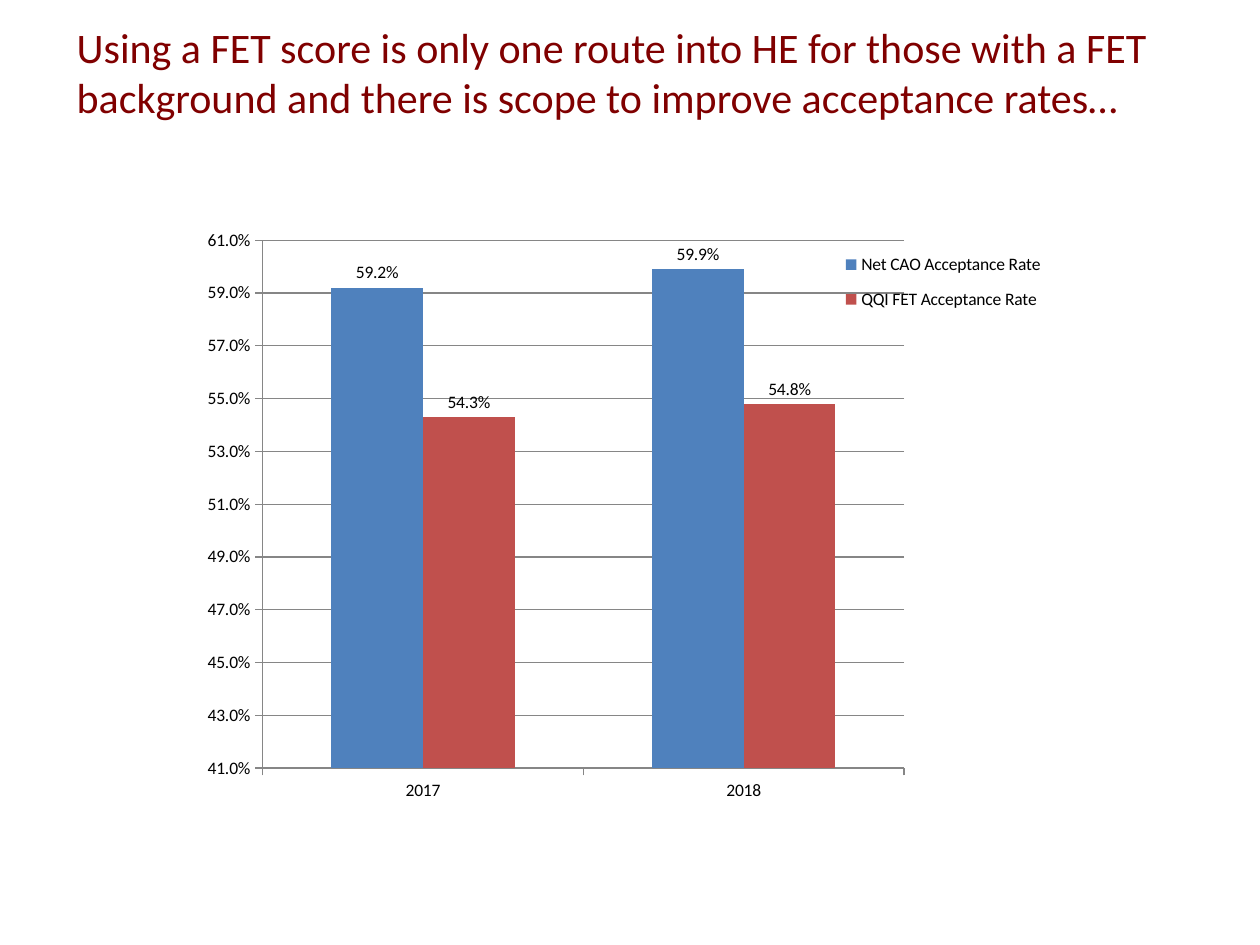
"""Build a slide comparing acceptance rates in a clustered column chart."""
from dataclasses import dataclass

from lxml.etree import SubElement
from pptx import Presentation
from pptx.chart.data import CategoryChartData
from pptx.dml.color import RGBColor
from pptx.enum.chart import XL_CHART_TYPE, XL_LABEL_POSITION, XL_LEGEND_POSITION, XL_TICK_MARK
from pptx.oxml.ns import qn
from pptx.slide import Slide
from pptx.util import Inches, Pt

MAROON = RGBColor(0x80, 0x00, 0x00)
BLACK = RGBColor(0x00, 0x00, 0x00)
GREY = RGBColor(0x86, 0x86, 0x86)
BLUE = RGBColor(0x4F, 0x81, 0xBD)
RED = RGBColor(0xC0, 0x50, 0x4D)


def write_text(frame, text, size, color, font):
    frame.word_wrap = True
    run = frame.paragraphs[0].add_run()
    run.text = text
    run.font.size, run.font.name = Pt(size), font
    run.font.color.rgb = color


def place(parent, index, x, y, w, h, inner=False):
    for old_layout in parent.findall(qn("c:layout")):
        parent.remove(old_layout)
    layout = SubElement(parent, qn("c:layout"))
    manual = SubElement(layout, qn("c:manualLayout"))
    settings = {"layoutTarget": "inner"} if inner else {}
    settings.update(xMode="edge", yMode="edge", x=x, y=y, w=w, h=h)
    for tag, value in settings.items():
        SubElement(manual, qn(f"c:{tag}")).set("val", str(value))
    parent.insert(index, layout)


@dataclass
class SlideBuilder:
    slide: Slide
    font: str = "Calibri"
    percent: str = "0.0%"

    def title(self, text, box):
        heading = self.slide.shapes.add_textbox(*map(Inches, box))
        write_text(heading.text_frame, text, size=24, color=MAROON, font=self.font)

    def column_chart(self, years, rates, colors, box):
        data = CategoryChartData(number_format=self.percent)
        data.categories = years
        for name, values in rates.items():
            data.add_series(name, values)
        chart = self.slide.shapes.add_chart(
            XL_CHART_TYPE.COLUMN_CLUSTERED, *map(Inches, box), data).chart
        chart.has_title = False
        chart.font.size, chart.font.name = Pt(10), self.font
        chart.font.color.rgb = BLACK
        self.axes(chart)
        self.columns(chart.plots[0], colors)
        self.legend(chart)
        place(chart.plots[0]._element.getparent(), 0, 0.113, 0.051, 0.69, 0.833, inner=True)

    def axes(self, chart):
        rate_axis = chart.value_axis
        rate_axis.minimum_scale, rate_axis.maximum_scale = 0.41, 0.61
        rate_axis.major_unit = 0.02
        rate_axis.tick_labels.number_format = self.percent
        rate_axis.tick_labels.number_format_is_linked = False
        rate_axis.has_major_gridlines = True
        for axis in (chart.category_axis, rate_axis):
            axis.major_tick_mark = XL_TICK_MARK.OUTSIDE
            axis.minor_tick_mark = XL_TICK_MARK.NONE
        for ruled in (chart.category_axis, rate_axis, rate_axis.major_gridlines):
            ruled.format.line.color.rgb = GREY
            ruled.format.line.width = Pt(0.75)

    def columns(self, plot, colors):
        plot.vary_by_categories = False
        plot.gap_width, plot.overlap = 150, 0
        for series, color in zip(plot.series, colors):
            series.format.fill.solid()
            series.format.fill.fore_color.rgb = color
            labels = series.data_labels
            labels.show_value = True
            labels.position = XL_LABEL_POSITION.OUTSIDE_END
            labels.number_format = self.percent
            labels.number_format_is_linked = False

    def legend(self, chart):
        chart.has_legend = True
        chart.legend.position = XL_LEGEND_POSITION.RIGHT
        chart.legend.include_in_layout = False
        place(chart.legend._element, 1, 0.72, 0.05, 0.25, 0.134)


def main():
    deck = Presentation()
    deck.slide_width, deck.slide_height = Inches(10), Inches(7.5)
    builder = SlideBuilder(deck.slides.add_slide(deck.slide_layouts[6]))
    builder.column_chart(
        ["2017", "2018"],
        {"Net CAO Acceptance Rate": (0.592, 0.599),
         "QQI FET Acceptance Rate": (0.543, 0.548)},
        (BLUE, RED), (1.25, 1.65, 7.38, 5.03))
    builder.title(
        "Using a FET score is only one route into HE for those with a FET "
        "background and there is scope to improve acceptance rates…",
        (0.51, 0.12, 9.49, 0.91))
    deck.save("out.pptx")


if __name__ == "__main__":
    main()
